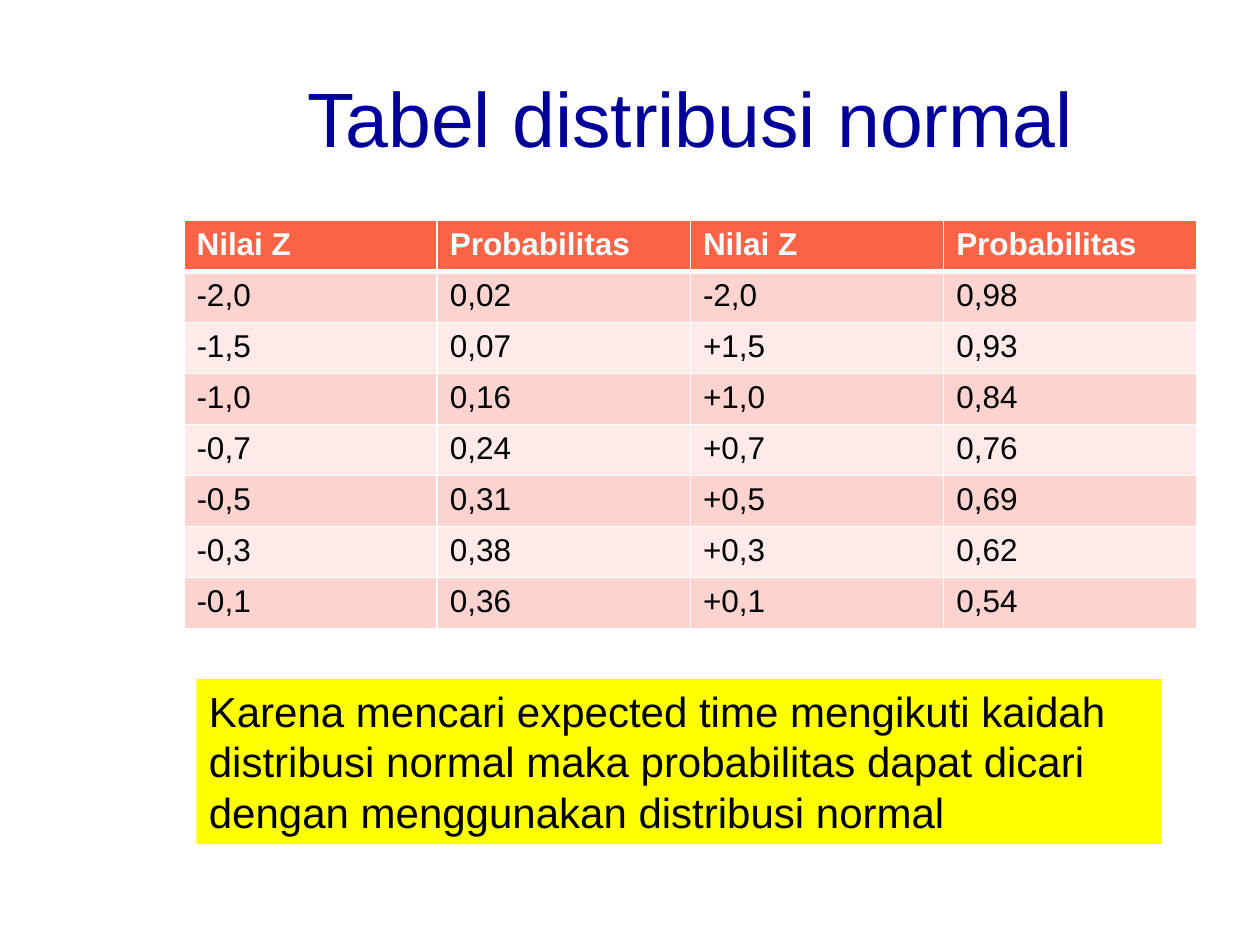
from lxml.etree import SubElement
from pptx import Presentation
from pptx.dml.color import RGBColor
from pptx.enum.shapes import MSO_SHAPE
from pptx.enum.text import MSO_ANCHOR, PP_ALIGN
from pptx.oxml.ns import qn
from pptx.util import Inches, Pt

FONT = "Arial"
NAVY = RGBColor(0x00, 0x00, 0x99)
BLACK = RGBColor(0x00, 0x00, 0x00)
WHITE = RGBColor(0xFF, 0xFF, 0xFF)
YELLOW = RGBColor(0xFF, 0xFF, 0x00)
HEADER_FILL = RGBColor(0xFB, 0x63, 0x46)
BAND_FILLS = (RGBColor(0xFD, 0xD3, 0xCF), RGBColor(0xFE, 0xEA, 0xE9))

LEFT, WIDTH = 1.46, 8.04
ROW_HEIGHT = 0.405
ROWS = [
    ("Nilai Z", "Probabilitas", "Nilai Z", "Probabilitas"),
    ("-2,0", "0,02", "-2,0", "0,98"),
    ("-1,5", "0,07", "+1,5", "0,93"),
    ("-1,0", "0,16", "+1,0", "0,84"),
    ("-0,7", "0,24", "+0,7", "0,76"),
    ("-0,5", "0,31", "+0,5", "0,69"),
    ("-0,3", "0,38", "+0,3", "0,62"),
    ("-0,1", "0,36", "+0,1", "0,54"),
]
NOTE = ("Karena mencari expected time mengikuti kaidah distribusi normal "
        "maka probabilitas dapat dicari dengan menggunakan distribusi normal")


def write_text(text_frame, text, size, color, bold=False, align=PP_ALIGN.LEFT):
    text_frame.text = text
    paragraph = text_frame.paragraphs[0]
    paragraph.alignment = align
    font = paragraph.runs[0].font
    font.name, font.size, font.bold = FONT, Pt(size), bold
    font.color.rgb = color


def set_borders(cell, top, bottom):
    """Draw white borders; they must stand before the fill in tcPr."""
    properties = cell._tc.get_or_add_tcPr()
    widths = {"a:lnL": 1, "a:lnR": 1, "a:lnT": top, "a:lnB": bottom}
    for position, (tag, width) in enumerate(widths.items()):
        line = SubElement(properties, qn(tag), w=str(Pt(width)))
        fill = SubElement(line, qn("a:solidFill"))
        SubElement(fill, qn("a:srgbClr"), val=str(WHITE))
        properties.insert(position, line)


def add_title(slide, text):
    title = slide.shapes.title
    title.left, title.top = Inches(LEFT), Inches(0.3)
    title.width, title.height = Inches(WIDTH), Inches(1.25)
    title.text_frame.vertical_anchor = MSO_ANCHOR.MIDDLE
    write_text(title.text_frame, text, 44, NAVY, align=PP_ALIGN.CENTER)


def add_probability_table(slide, rows):
    table = slide.shapes.add_table(
        len(rows), len(rows[0]), Inches(LEFT), Inches(1.75),
        Inches(WIDTH), Inches(ROW_HEIGHT * len(rows))).table
    for row_index, row in enumerate(rows):
        is_header = row_index == 0
        for column_index, text in enumerate(row):
            cell = table.cell(row_index, column_index)
            cell.fill.solid()
            cell.fill.fore_color.rgb = (
                HEADER_FILL if is_header else BAND_FILLS[(row_index - 1) % 2])
            set_borders(cell, top=3 if row_index == 1 else 1,
                        bottom=3 if is_header else 1)
            write_text(cell.text_frame, text, 18,
                       WHITE if is_header else BLACK, bold=is_header)


def add_note(slide, text):
    note = slide.shapes.add_shape(MSO_SHAPE.RECTANGLE, Inches(1.56),
                                  Inches(5.39), Inches(7.66), Inches(1.31))
    note.shadow.inherit = False
    note.fill.solid()
    note.fill.fore_color.rgb = YELLOW
    note.line.fill.background()
    note.text_frame.word_wrap = True
    note.text_frame.vertical_anchor = MSO_ANCHOR.TOP
    write_text(note.text_frame, text, 24, BLACK)


def main():
    presentation = Presentation()
    presentation.slide_width, presentation.slide_height = Inches(10), Inches(7.5)
    # Title Only layout
    slide = presentation.slides.add_slide(presentation.slide_layouts[5])
    add_title(slide, "Tabel distribusi normal")
    add_probability_table(slide, ROWS)
    add_note(slide, NOTE)
    presentation.save("out.pptx")


if __name__ == "__main__":
    main()
